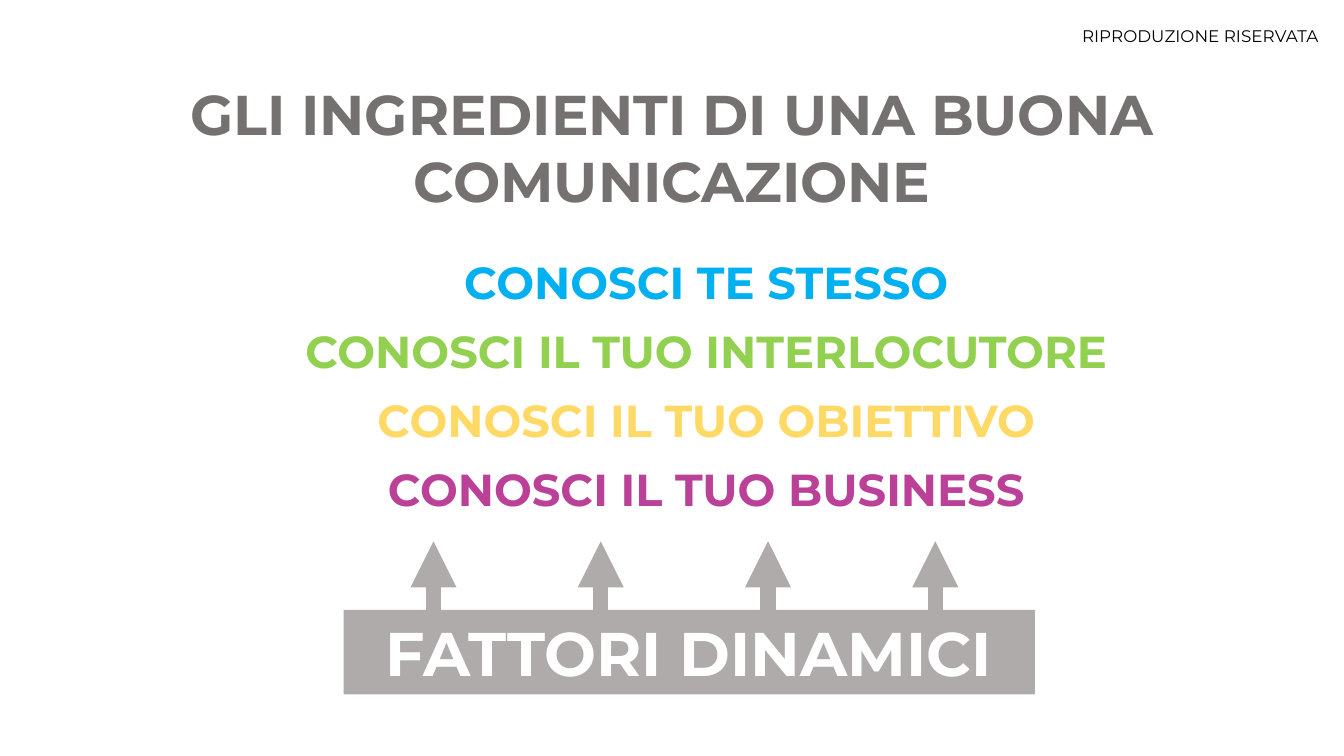
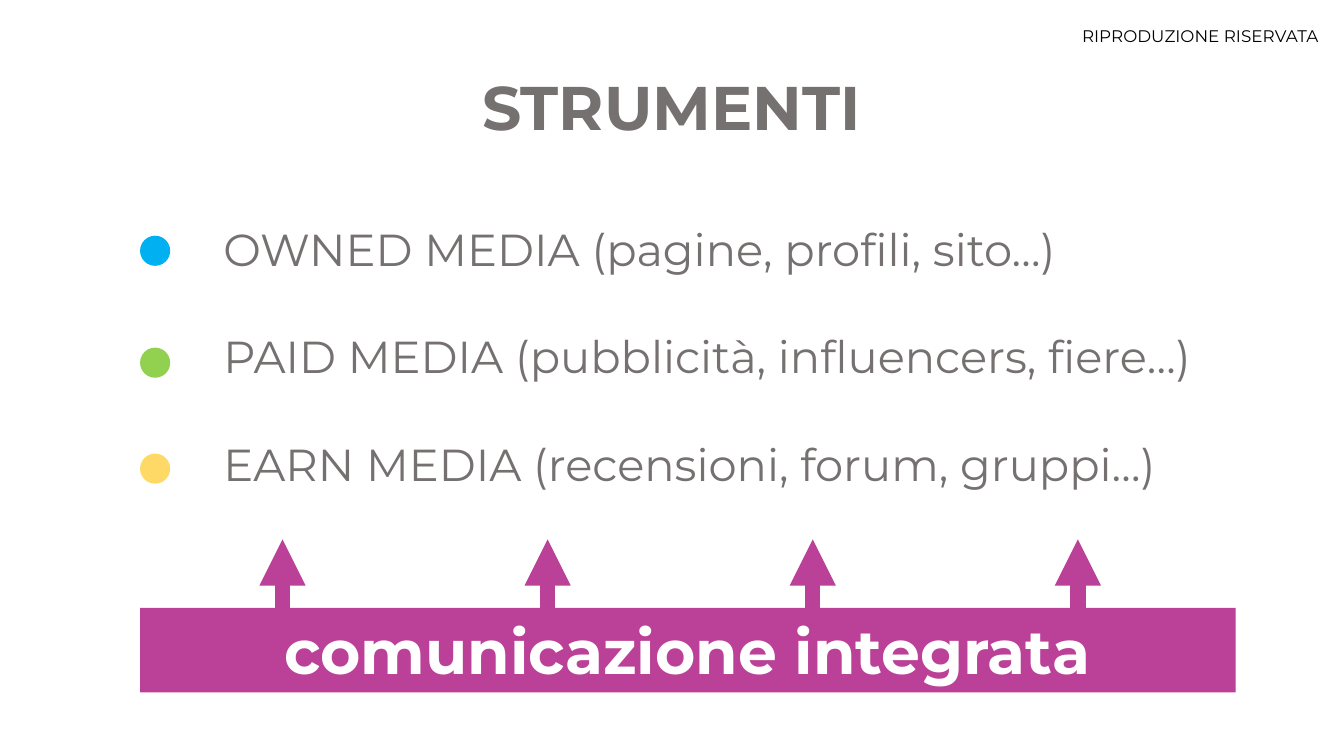
from lxml import etree
from pptx import Presentation
from pptx import util as u
from pptx.dml.color import RGBColor
from pptx.enum import shapes, text
from pptx.oxml import ns

# Shared style
FONT = "Montserrat"
BLACK = RGBColor(0x00, 0x00, 0x00)
WHITE = RGBColor(0xFF, 0xFF, 0xFF)
DARK_GREY = RGBColor(0x76, 0x71, 0x71)
LIGHT_GREY = RGBColor(0xAF, 0xAB, 0xAB)
BLUE = RGBColor(0x00, 0xB0, 0xF0)
GREEN = RGBColor(0x92, 0xD0, 0x50)
YELLOW = RGBColor(0xFF, 0xD9, 0x66)
MAGENTA = RGBColor(0xBB, 0x40, 0x98)

# Boxes are (left, top, width, height) in centimetres
RESERVED_BOX = (23.57, 0.53, 9.91, 0.76)
TITLE_LEFT, TITLE_WIDTH = 2.72, 28.42
ARROW_COUNT = 4
ARROW_LENGTH = 1.73


def lengths(box):
    return [u.Cm(value) for value in box]


def write_text(shape, lines, size, color, bold=False,
               align=text.PP_ALIGN.CENTER, gap=0):
    """Fill a shape with one paragraph per line; gap is in points."""
    frame = shape.text_frame
    frame.word_wrap = True
    for index, line in enumerate(lines):
        paragraph = frame.paragraphs[0] if index == 0 else frame.add_paragraph()
        paragraph.alignment = align
        if index:
            paragraph.space_before = u.Pt(gap)
        run = paragraph.add_run()
        run.text = line
        run.font.name = FONT
        run.font.size = u.Pt(size)
        run.font.bold = bold
        run.font.color.rgb = color


def add_text(slide, box, lines, **style):
    write_text(slide.shapes.add_textbox(*lengths(box)), lines, **style)


def add_filled_shape(parent, kind, box, color):
    shape = parent.shapes.add_shape(kind, *lengths(box))
    shape.shadow.inherit = False
    shape.fill.solid()
    shape.fill.fore_color.rgb = color
    shape.line.fill.background()
    return shape


def add_up_arrow(parent, x, bottom, color):
    arrow = parent.shapes.add_connector(
        shapes.MSO_CONNECTOR.STRAIGHT,
        u.Cm(x), u.Cm(bottom), u.Cm(x), u.Cm(bottom - ARROW_LENGTH))
    arrow.line.color.rgb = color
    arrow.line.width = u.Pt(11)
    properties = arrow._element.spPr
    etree.SubElement(properties.find(ns.qn("a:ln")), ns.qn("a:tailEnd"),
                     type="triangle")
    etree.SubElement(properties, ns.qn("a:effectLst"))


def add_arrow_band(slide, box, label, color):
    """Band with a label and evenly spaced arrows rising from its top."""
    left, top, width, _ = box
    group = slide.shapes.add_group_shape()
    band = add_filled_shape(group, shapes.MSO_SHAPE.RECTANGLE, box, color)
    band.text_frame.vertical_anchor = text.MSO_ANCHOR.MIDDLE
    write_text(band, [label], size=44, color=WHITE, bold=True)
    for index in range(ARROW_COUNT):
        add_up_arrow(group, left + width * (0.13 + 0.242 * index), top, color)


def add_factors(slide, box, factors):
    """Stack of coloured lines, one row each."""
    left, top, width, height = box
    pitch = height / len(factors)
    for index, (label, color) in enumerate(factors):
        add_text(slide, (left, top + index * pitch, width, 1.62), [label],
                 size=32, color=color, bold=True)


def add_media_list(slide, box, items):
    """Lines of text, each with a coloured dot at the left edge of the box."""
    left, top, width, height = box
    indent, diameter = 1.85, 0.76
    add_text(slide, (left + indent, top, width - indent, height),
             [label for label, _, _ in items], size=32, color=DARK_GREY,
             align=text.PP_ALIGN.LEFT, gap=38.4)
    for _, color, offset in items:
        add_filled_shape(slide, shapes.MSO_SHAPE.OVAL,
                         (left, top + offset, diameter, diameter), color)


def add_titled_slide(presentation, title, top, height, size):
    """Blank slide with the shared title and reserved-rights line."""
    slide = presentation.slides.add_slide(presentation.slide_layouts[6])
    add_text(slide, (TITLE_LEFT, top, TITLE_WIDTH, height), [title],
             size=size, color=DARK_GREY, bold=True)
    add_text(slide, RESERVED_BOX, ["RIPRODUZIONE RISERVATA"],
             size=12, color=BLACK, align=text.PP_ALIGN.RIGHT)
    return slide


def build_ingredients(presentation):
    slide = add_titled_slide(
        presentation, "GLI INGREDIENTI DI UNA BUONA COMUNICAZIONE",
        top=1.88, height=3.68, size=40)
    add_factors(slide, (6.35, 6.3, 22.91, 6.94), [
        ("CONOSCI TE STESSO", BLUE),
        ("CONOSCI IL TUO INTERLOCUTORE", GREEN),
        ("CONOSCI IL TUO OBIETTIVO", YELLOW),
        ("CONOSCI IL TUO BUSINESS", MAGENTA),
    ])
    add_arrow_band(slide, (8.66, 15.37, 17.42, 2.13),
                   "FATTORI DINAMICI", LIGHT_GREY)


def build_tools(presentation):
    slide = add_titled_slide(presentation, "STRUMENTI",
                             top=1.6, height=2.13, size=44)
    add_media_list(slide, (3.53, 5.46, 28.04, 7.1), [
        ("OWNED MEDIA (pagine, profili, sito…)", BLUE, 0.48),
        ("PAID MEDIA (pubblicità, influencers, fiere…)", GREEN, 3.3),
        ("EARN MEDIA (recensioni, forum, gruppi…)", YELLOW, 5.97),
    ])
    add_arrow_band(slide, (3.53, 15.32, 27.61, 2.13),
                   "comunicazione integrata", MAGENTA)


def main():
    presentation = Presentation()
    presentation.slide_width = u.Cm(33.87)
    presentation.slide_height = u.Cm(19.05)
    build_ingredients(presentation)
    build_tools(presentation)
    presentation.save("out.pptx")


if __name__ == "__main__":
    main()
